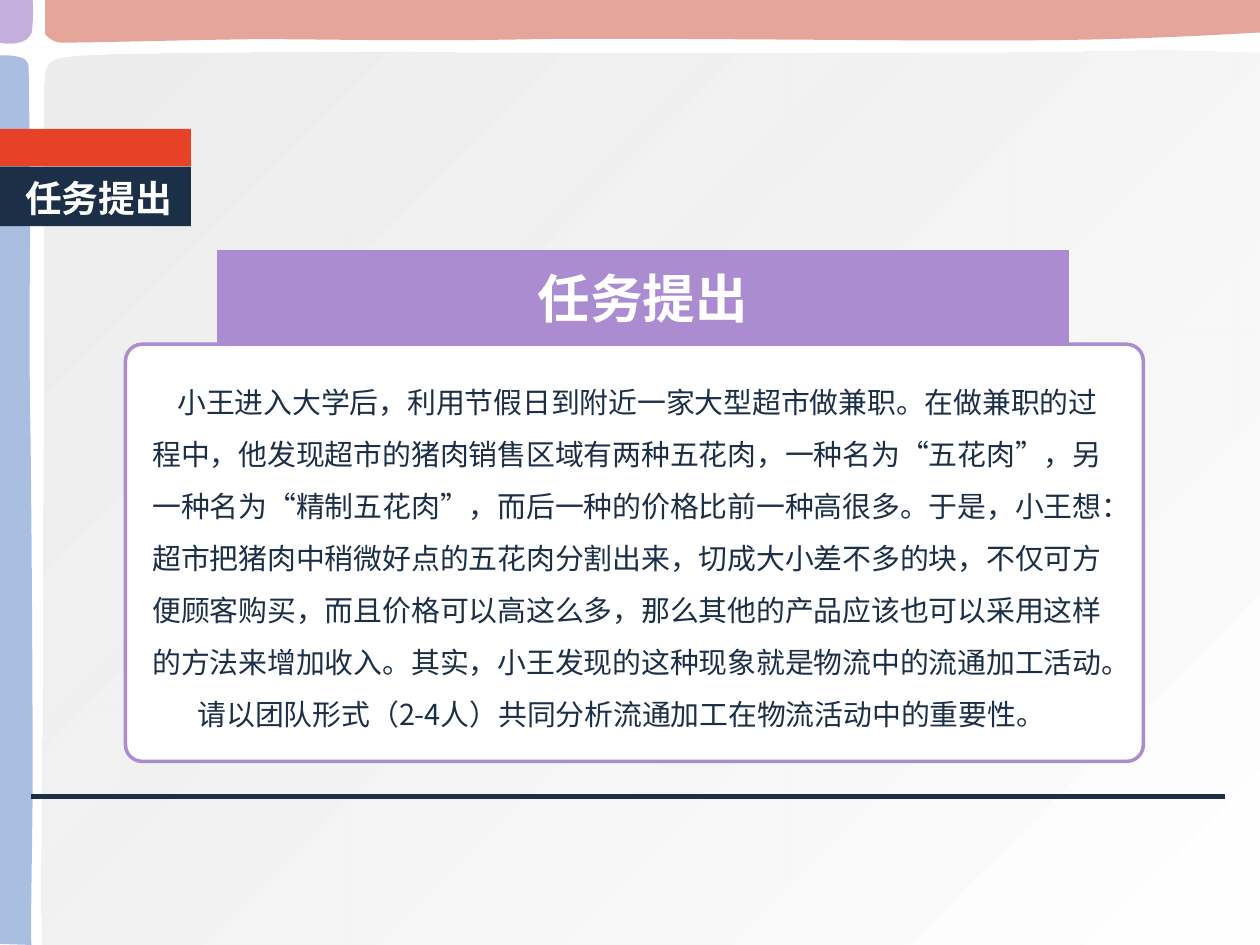
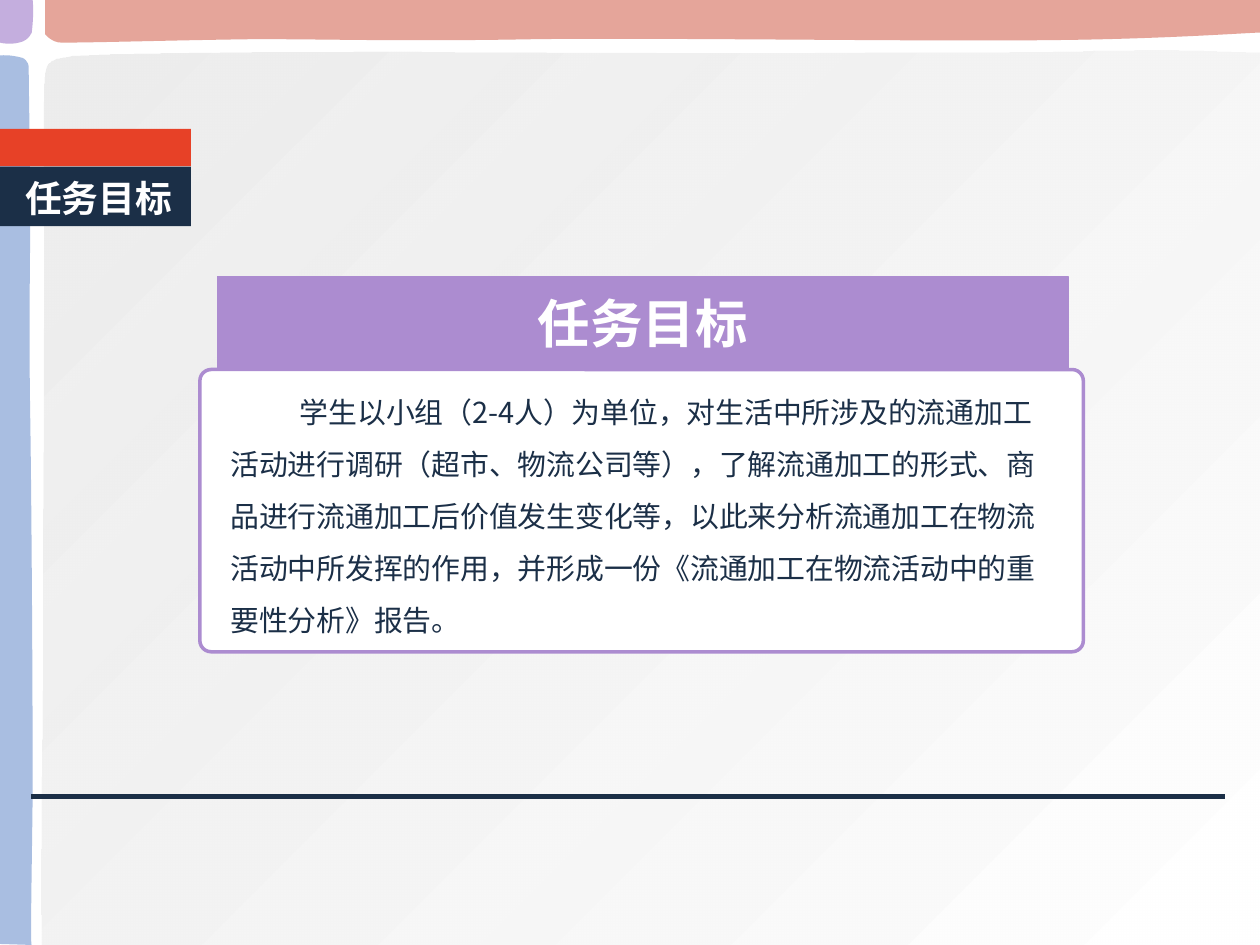
from lxml import etree
from pptx import Presentation
from pptx import util as u
from pptx.dml.color import RGBColor
from pptx.enum import shapes, text
from pptx.oxml.ns import qn

FONT = "Noto Sans CJK SC"
NAVY, RED, VIOLET, WHITE = "1B2F47", "E74127", "AC8CD0", "FFFFFF"
CORAL, BLUE, GREY = "DA7F70", "85A3D5", "E6E6E6"

# Outlines in cm: a pair is a straight step, six numbers are a Bezier curve.
PANEL = [
    (25.4, 19.05), (25.4, 1.07),
    (22.5, 0.97, 21.72, 1.07, 19.3, 1.07),
    (16.92, 1.07, 13.97, 1.09, 11, 1.07),
    (8.03, 1.04, 3.12, 1.04, 1.45, 1.14),
    (0.91, 1.22, 0.91, 1.24, 0.89, 1.85),
    (0.86, 2.44, 0.89, 2.79, 0.89, 4.62),
    (0.89, 6.5, 0.86, 10.46, 0.86, 12.85),
    (0.86, 15.27, 0.81, 16.81, 0.84, 19.05),
    (13.13, 19.05, 25.4, 19.05, 25.4, 19.05),
]
TOP_BAND = [
    (25.4, 0), (25.4, 0.66),
    (25.43, 0.64, 23.57, 0.79, 21.13, 0.81),
    (18.69, 0.84, 13.49, 0.76, 10.82, 0.79),
    (8.15, 0.84, 6.73, 0.79, 5.16, 0.79),
    (3.56, 0.81, 1.96, 0.86, 1.24, 0.86),
    (1.04, 0.86, 0.91, 0.69, 0.91, 0.69),
    (0.91, 0.69, 0.91, 0.36, 0.91, 0),
    (25.4, 0),
]
SIDE_BAND = [
    (0, 19.03), (0.64, 19.05),
    (0.61, 19.08, 0.64, 17.73, 0.66, 15.95),
    (0.66, 14.17, 0.64, 10.34, 0.61, 8.38),
    (0.58, 6.45, 0.61, 5.38, 0.61, 4.24),
    (0.61, 3.07, 0.58, 1.91, 0.58, 1.37),
    (0.58, 1.22, 0.46, 1.17, 0.46, 1.17),
    (0.18, 1.09, 0, 1.12, 0, 1.12),
    (0, 19.03),
]
CORNER = [
    (0, 0), (0.66, 0),
    (0.69, 0.3, 0.64, 0.66, 0.64, 0.66),
    (0.58, 0.79, 0.48, 0.84, 0.38, 0.86),
    (0.18, 0.91, 0, 0.86, 0, 0.86),
    (0, 0),
]

# Each paragraph is its first-line indent in cm and its wording.
PROPOSAL = [
    (0.5, "小王进入大学后，利用节假日到附近一家大型超市做兼职。在做兼职的过程中，"
          "他发现超市的猪肉销售区域有两种五花肉，一种名为“五花肉”，另一种名为“精制五花肉”，"
          "而后一种的价格比前一种高很多。于是，小王想：超市把猪肉中稍微好点的五花肉分割出来，"
          "切成大小差不多的块，不仅可方便顾客购买，而且价格可以高这么多，"
          "那么其他的产品应该也可以采用这样的方法来增加收入。"
          "其实，小王发现的这种现象就是物流中的流通加工活动。"),
    (0.91, "请以团队形式（2-4人）共同分析流通加工在物流活动中的重要性。"),
]
GOAL = [
    (1.27, " 学生以小组（2-4人）为单位，对生活中所涉及的流通加工活动进行调研（超市、物流公司等），"
           "了解流通加工的形式、商品进行流通加工后价值发生变化等，"
           "以此来分析流通加工在物流活动中所发挥的作用，"
           "并形成一份《流通加工在物流活动中的重要性分析》报告。"),
]


def color(value):
    return RGBColor.from_string(value)


def paint(shape, fill, line=None, width=0):
    shape.fill.solid()
    shape.fill.fore_color.rgb = color(fill)
    if line:
        shape.line.color.rgb = color(line)
        shape.line.width = u.Pt(width)
    else:
        shape.line.fill.background()


def set_opacity(shape, percent):
    """Make the first colour of the shape's fill see-through."""
    first_color = next(shape.element.iter(qn("a:srgbClr")))
    etree.SubElement(first_color, qn("a:alpha")).set("val", str(percent * 1000))


def place(shape, left, top, width, height):
    shape.left, shape.top = u.Cm(left), u.Cm(top)
    shape.width, shape.height = u.Cm(width), u.Cm(height)


def bend(shape, outline):
    """Join each three line steps that stand for a curve into one Bezier step."""
    lines = iter(list(shape.element.iter(qn("a:lnTo"))))
    for step in outline[1:]:
        line = next(lines)
        if len(step) == 2:
            continue
        curve = etree.Element(qn("a:cubicBezTo"))
        line.addprevious(curve)
        for part in (line, next(lines), next(lines)):
            curve.append(part[0])
            part.getparent().remove(part)


def add_outline(slide, outline, fill):
    points = [(u.Cm(step[i]), u.Cm(step[i + 1]))
              for step in outline for i in range(0, len(step), 2)]
    builder = slide.shapes.build_freeform(*points[0])
    builder.add_line_segments(points[1:], close=True)
    shape = builder.convert_to_shape()
    bend(shape, outline)
    shape.shadow.inherit = False
    paint(shape, fill)
    return shape


def add_box(slide, kind, place_at, fill, line=None, width=0, rounding=0):
    shape = slide.shapes.add_shape(kind, *(u.Cm(value) for value in place_at))
    shape.shadow.inherit = False
    shape.adjustments[0] = rounding
    paint(shape, fill, line, width)


def add_rule(slide, start, end, y):
    rule = slide.shapes.add_connector(
        shapes.MSO_CONNECTOR.STRAIGHT, u.Cm(start), u.Cm(y), u.Cm(end), u.Cm(y))
    rule.line.color.rgb = color(NAVY)
    rule.line.width = u.Pt(3)
    etree.SubElement(rule.element.spPr, qn("a:effectLst"))


def add_run(paragraph, wording, size, ink, bold=False):
    run = paragraph.add_run()
    run.text = wording
    run.font.name, run.font.size, run.font.bold = FONT, u.Pt(size), bold
    run.font.color.rgb = color(ink)
    east_asian = etree.SubElement(run.font._element, qn("a:ea"))
    east_asian.set("typeface", FONT)


def prepare_frame(shape, anchor):
    frame = shape.text_frame
    frame.word_wrap = True
    frame.auto_size = text.MSO_AUTO_SIZE.NONE
    frame.vertical_anchor = anchor
    return frame


def build_background(slide, layout):
    """Draw the backdrop that all slides share and move it to their layout."""
    panel = add_outline(slide, PANEL, WHITE)
    panel.fill.gradient()
    panel.fill.gradient_angle = 315
    for stop, shade, position in zip(panel.fill.gradient_stops, (GREY, WHITE), (0, 1)):
        stop.color.rgb = color(shade)
        stop.position = position
    bands = [add_outline(slide, outline, fill) for outline, fill in
             ((TOP_BAND, CORAL), (SIDE_BAND, BLUE), (CORNER, VIOLET))]
    for number, shape in enumerate([panel, *bands], start=100):
        set_opacity(shape, 70)
        shape.element.xpath(".//p:cNvPr")[0].set("id", str(number))
        layout.shapes.element.append(shape.element)


def add_tag(slide, wording):
    rounded = shapes.MSO_SHAPE.ROUNDED_RECTANGLE
    add_box(slide, rounded, (0, 3.36, 3.85, 1.2), NAVY)
    label = slide.shapes.add_textbox(u.Cm(0.26), u.Cm(3.42), u.Cm(3.58), u.Cm(1.14))
    frame = prepare_frame(label, text.MSO_ANCHOR.TOP)
    add_run(frame.paragraphs[0], wording, 21, WHITE, bold=True)
    add_box(slide, rounded, (0, 2.6, 3.85, 0.75), RED)


def fill_banner(slide, wording, top):
    banner = slide.shapes.title
    place(banner, 4.38, top, 17.15, 1.88)
    paint(banner, VIOLET, VIOLET, 0.75)
    paragraph = prepare_frame(banner, text.MSO_ANCHOR.MIDDLE).paragraphs[0]
    paragraph.alignment = text.PP_ALIGN.CENTER
    add_run(paragraph, wording, 30, WHITE, bold=True)


def fill_body(slide, paragraphs, place_at):
    body = slide.placeholders[1]
    place(body, *place_at)
    frame = prepare_frame(body, text.MSO_ANCHOR.TOP)
    for number, (indent, wording) in enumerate(paragraphs):
        paragraph = frame.add_paragraph() if number else frame.paragraphs[0]
        paragraph.line_spacing = 1.5
        paragraph.space_before = u.Pt(0)
        properties = paragraph._p.get_or_add_pPr()
        properties.set("marL", "0")
        properties.set("indent", str(u.Cm(indent)))
        etree.SubElement(properties, qn("a:buNone"))
        add_run(paragraph, wording, 16.5, NAVY)


def add_task(slide, heading, paragraphs, banner_top, card_at, body_at):
    add_tag(slide, heading)
    add_rule(slide, 24.69, 0.63, 16.05)
    add_box(slide, shapes.MSO_SHAPE.ROUNDED_RECTANGLE, card_at, WHITE, VIOLET, 2, 0.04)
    fill_body(slide, paragraphs, body_at)
    fill_banner(slide, heading, banner_top)
    for shape in (slide.placeholders[1], slide.shapes.title):
        slide.shapes.element.append(shape.element)  # bring in front of the card


def main():
    presentation = Presentation()
    presentation.slide_width, presentation.slide_height = u.Cm(25.4), u.Cm(19.05)
    layout = presentation.slide_layouts[1]
    proposal_slide, goal_slide = (presentation.slides.add_slide(layout) for _ in range(2))
    build_background(proposal_slide, layout)
    add_task(proposal_slide, "任务提出", PROPOSAL, 5.05,
             (2.53, 6.94, 20.52, 8.41), (2.82, 7.28, 20.12, 7.95))
    add_task(goal_slide, "任务目标", GOAL, 5.57,
             (4.03, 7.45, 17.81, 5.69), (4.39, 7.48, 17.22, 5.54))
    presentation.save("out.pptx")


if __name__ == "__main__":
    main()
